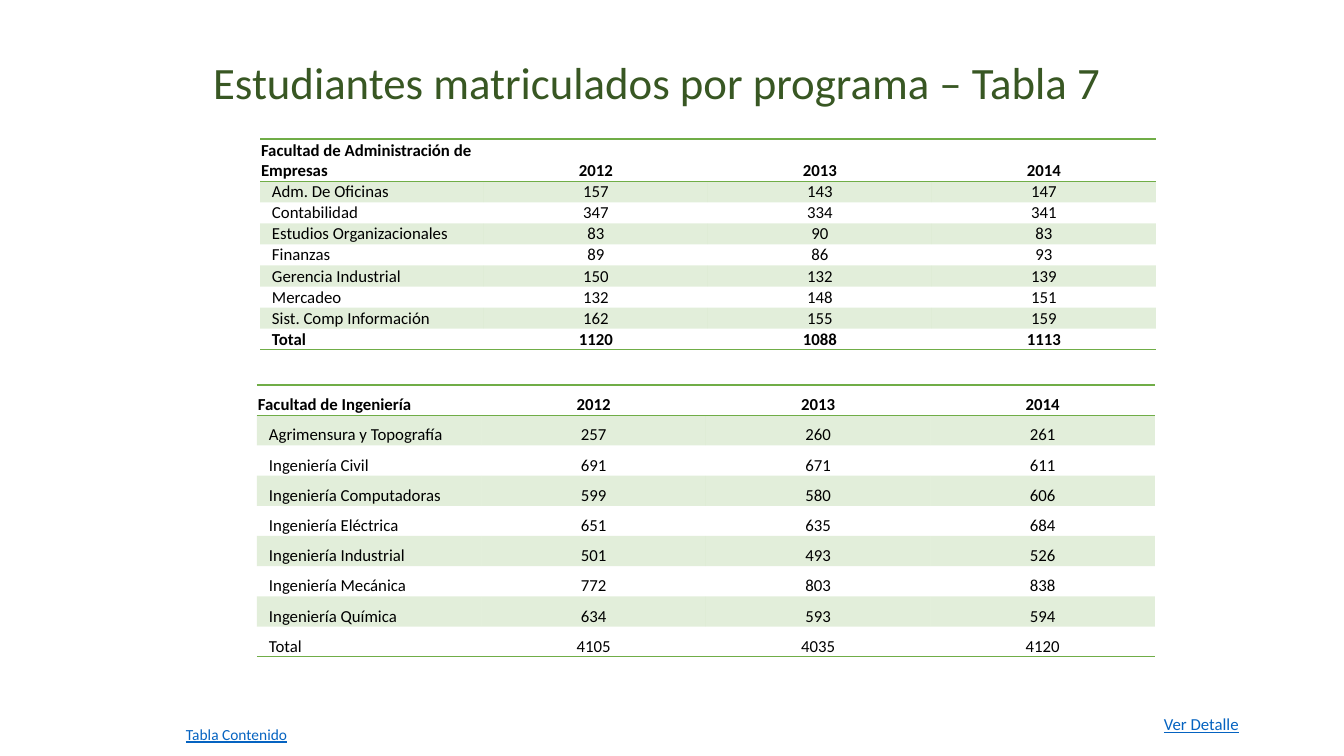
from dataclasses import dataclass
from itertools import accumulate

from lxml.etree import SubElement
from pptx import Presentation
from pptx.dml.color import RGBColor
from pptx.enum.text import MSO_ANCHOR, MSO_AUTO_SIZE, PP_ALIGN
from pptx.oxml import parse_xml
from pptx.oxml.ns import nsdecls, qn
from pptx.util import Emu, Pt


@dataclass(frozen=True)
class Theme:
    """Colours, font and type sizes of the slide."""
    font: str = "Calibri"
    title: str = "385723"
    ink: str = "000000"
    accent: str = "70AD47"
    link: str = "0563C1"
    title_size: int = 32
    body_size: int = 12
    small_size: int = 11
    band_alpha: int = 20000
    plain_table: str = "{2D5ABB26-0587-4C30-8999-92F81FD0307C}"


THEME = Theme()
YEARS = ("2012", "2013", "2014")
BUSINESS = (
    ("Facultad de Administración de Empresas", *YEARS),
    ("Adm. De Oficinas", 157, 143, 147),
    ("Contabilidad", 347, 334, 341),
    ("Estudios Organizacionales", 83, 90, 83),
    ("Finanzas", 89, 86, 93),
    ("Gerencia Industrial", 150, 132, 139),
    ("Mercadeo", 132, 148, 151),
    ("Sist. Comp Información", 162, 155, 159),
    ("Total", 1120, 1088, 1113),
)
ENGINEERING = (
    ("Facultad de Ingeniería", *YEARS),
    ("Agrimensura y Topografía", 257, 260, 261),
    ("Ingeniería Civil", 691, 671, 611),
    ("Ingeniería Computadoras", 599, 580, 606),
    ("Ingeniería Eléctrica", 651, 635, 684),
    ("Ingeniería Industrial", 501, 493, 526),
    ("Ingeniería Mecánica", 772, 803, 838),
    ("Ingeniería Química", 634, 593, 594),
    ("Total", 4105, 4035, 4120),
)


def px(length):
    """Turn pixels into EMU."""
    return Emu(round(length * 914400 / 100.8))


def add_run(paragraph, text, size, color, bold=False, underline=False):
    """Add one formatted run to a paragraph."""
    run = paragraph.add_run()
    run.text = str(text)
    font = run.font
    font.name, font.size = THEME.font, Pt(size)
    font.bold, font.underline = bold, underline
    font.color.rgb = RGBColor.from_string(color)


def set_label(label, text, size, color, underline=False):
    """Write a single unwrapped line into a shape."""
    frame = label.text_frame
    frame.word_wrap = False
    frame.auto_size = MSO_AUTO_SIZE.SHAPE_TO_FIT_TEXT
    frame.vertical_anchor = MSO_ANCHOR.TOP
    line = frame.paragraphs[0]
    line.alignment = PP_ALIGN.LEFT
    add_run(line, text, size, color, underline=underline)


def add_title(slide, box, text):
    """Place the title placeholder in the box."""
    title = slide.shapes.title
    title.left, title.top, title.width, title.height = map(px, box)
    set_label(title, text, THEME.title_size, THEME.title)


def add_link_label(slide, box, text, size):
    """Place an underlined navigation label in the box."""
    label = slide.shapes.add_textbox(*map(px, box))
    set_label(label, text, size, THEME.link, underline=True)


def add_border(cell, side):
    """Draw a one-point accent rule on one side of a cell."""
    border = parse_xml(
        f'<a:{side} {nsdecls("a")} w="12700"><a:solidFill>'
        f'<a:srgbClr val="{THEME.accent}"/></a:solidFill></a:{side}>')
    cell._tc.get_or_add_tcPr().insert(0, border)


def fill_cell(cell, banded):
    """Give a cell a translucent band or no fill."""
    if not banded:
        cell.fill.background()
        return
    cell.fill.solid()
    cell.fill.fore_color.rgb = RGBColor.from_string(THEME.accent)
    tint = cell._tc.tcPr.find(f'{qn("a:solidFill")}/{qn("a:srgbClr")}')
    SubElement(tint, qn("a:alpha")).set("val", str(THEME.band_alpha))


def add_faculty_table(slide, box, rows, header_weight=1, bold_total=False):
    """Place a banded enrolment table whose rows share the height of the box."""
    columns, last = len(rows[0]), len(rows) - 1
    table = slide.shapes.add_table(len(rows), columns, *map(px, box)).table
    table.first_row = table.horz_banding = False
    table._tbl.tblPr.find(qn("a:tableStyleId")).text = THEME.plain_table
    for column in table.columns:
        column.width = px(box[2] / columns)
    weights = [header_weight] + [1] * last
    edges = [px(box[3] * part / sum(weights)) for part in accumulate(weights, initial=0)]
    for r, values in enumerate(rows):
        table.rows[r].height = Emu(edges[r + 1] - edges[r])
        for c, value in enumerate(values):
            cell = table.cell(r, c)
            cell.vertical_anchor = MSO_ANCHOR.BOTTOM
            cell.margin_left = px(12 if r and not c else 1)
            cell.margin_right = px(1)
            cell.margin_top = cell.margin_bottom = 0
            line = cell.text_frame.paragraphs[0]
            line.alignment = PP_ALIGN.CENTER if c else PP_ALIGN.LEFT
            add_run(line, value, THEME.body_size, THEME.ink,
                    bold=r == 0 or (bold_total and r == last))
            fill_cell(cell, r % 2 == 1)
            if r in (0, last):
                add_border(cell, "lnB")
            if r == 0:
                add_border(cell, "lnT")


def main():
    """Build and save the enrolment slide."""
    deck = Presentation()
    deck.slide_width, deck.slide_height = px(1344), px(756)
    slide = deck.slides.add_slide(deck.slide_layouts[5])
    add_title(slide, (203, 50, 917, 65), "Estudiantes matriculados por programa – Tabla 7")
    add_faculty_table(slide, (260, 139, 896, 211), BUSINESS, header_weight=2, bold_total=True)
    add_faculty_table(slide, (257, 385, 898, 272), ENGINEERING)
    add_link_label(slide, (176, 720, 123, 29), "Tabla Contenido", THEME.small_size)
    add_link_label(slide, (1154, 709, 96, 30), "Ver Detalle", THEME.body_size)
    deck.save("out.pptx")


if __name__ == "__main__":
    main()
